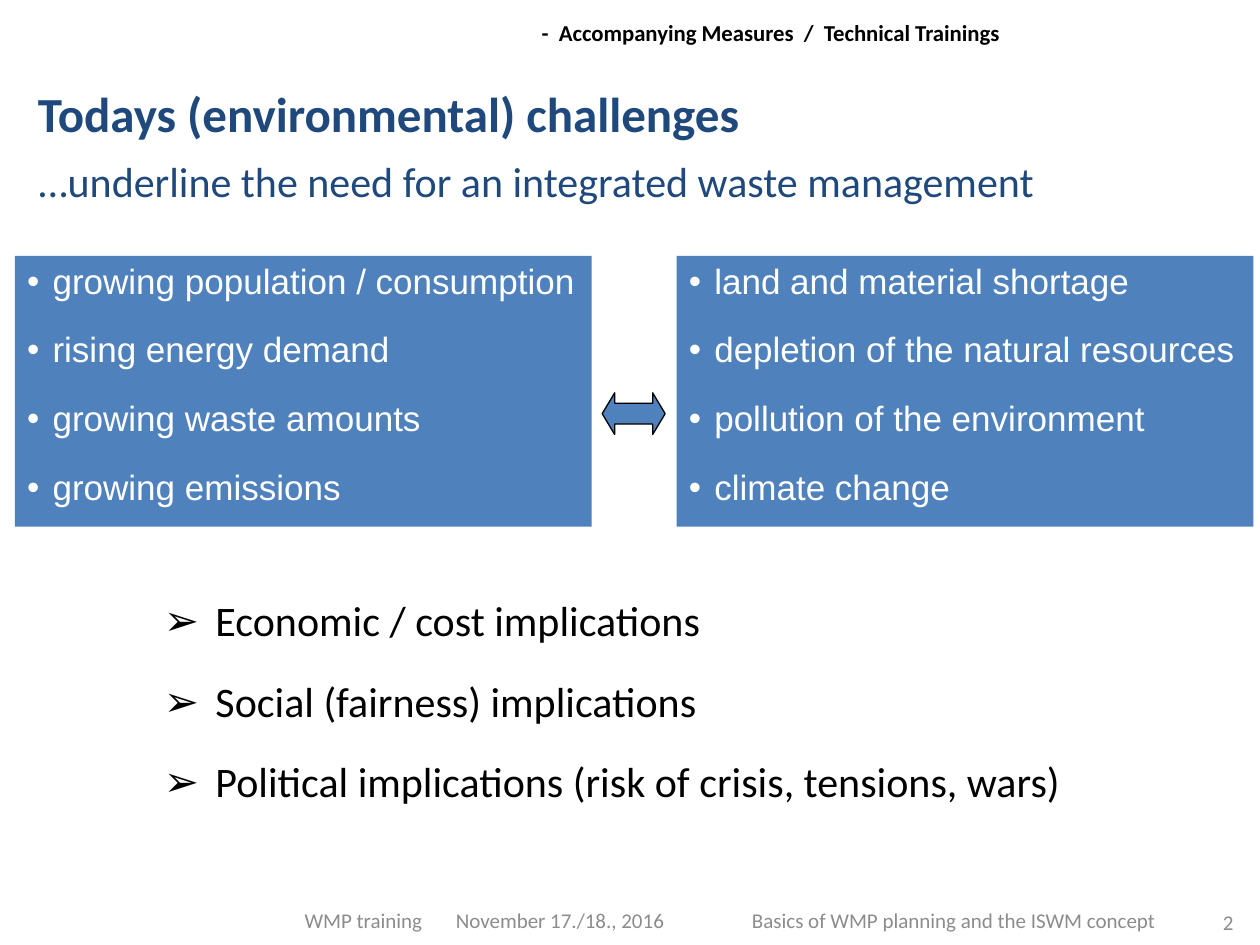
"""Builds the slide on environmental challenges and waste management."""
import pptx
import pptx.util
import pptx.dml.color
import pptx.enum.shapes
import pptx.enum.text
import pptx.oxml
import pptx.oxml.ns

Cm, Pt = pptx.util.Cm, pptx.util.Pt
RGB = pptx.dml.color.RGBColor
ALIGN = pptx.enum.text.PP_ALIGN
ANCHOR = pptx.enum.text.MSO_ANCHOR
SHAPE = pptx.enum.shapes.MSO_SHAPE

NAVY = RGB(0x1F, 0x49, 0x7D)
BLUE = RGB(0x4F, 0x81, 0xBD)
GREY = RGB(0x8C, 0x8C, 0x8C)
WHITE = RGB(0xFF, 0xFF, 0xFF)
BLACK = RGB(0, 0, 0)


class Deck:
    def __init__(self):
        self.file = pptx.Presentation()
        self.file.slide_width, self.file.slide_height = Cm(25.4), Cm(19.05)
        self.slide = self.file.slides.add_slide(self.file.slide_layouts[1])

    def place(self, shape, box):
        for name, size in zip(("left", "top", "width", "height"), box):
            setattr(shape, name, Cm(size))

    def node(self, para, xml):
        head, tail = xml.split(" ", 1)
        space = pptx.oxml.ns.nsdecls("a")
        item = pptx.oxml.parse_xml(f"<a:{head} {space} {tail}")
        para._p.get_or_add_pPr().append(item)

    def fill_text(self, shape, lines, size, color, face="Calibri", bold=False,
                  anchor=ANCHOR.TOP, align=ALIGN.LEFT, mark=None, dent=0, tab=None):
        frame = shape.text_frame
        form = {"word_wrap": True, "vertical_anchor": anchor,
                "auto_size": pptx.enum.text.MSO_AUTO_SIZE.NONE}
        for name, value in form.items():
            setattr(frame, name, value)
        for row, text in enumerate(lines):
            para = frame.paragraphs[0] if row == 0 else frame.add_paragraph()
            para.alignment = align
            if mark:
                props = para._p.get_or_add_pPr()
                props.set("marL", str(Cm(dent)))
                props.set("indent", str(-Cm(dent)))
                self.node(para, 'buFont typeface="Arial"/>')
                self.node(para, f'buChar char="{mark}"/>')
                para.line_spacing = 0.95
                para.space_before = Pt(size / 2 + 0.5 if row else 0)
                para.space_after = Pt(6)
            if tab:
                self.node(para, f'tabLst ><a:tab pos="{Cm(tab)}" algn="l"/></a:tabLst>')
            run = para.add_run()
            run.text = text
            font = {"size": Pt(size), "name": face, "bold": bold}
            for name, value in font.items():
                setattr(run.font, name, value)
            run.font.color.rgb = color

    def title(self, box, text, **style):
        self.place(self.slide.shapes.title, box)
        self.fill_text(self.slide.shapes.title, [text], **style)

    def body(self, box, lines, **style):
        shape = self.slide.placeholders[1]
        self.place(shape, box)
        self.fill_text(shape, lines, **style)

    def label(self, box, text, **style):
        shape = self.slide.shapes.add_textbox(*map(Cm, box))
        self.fill_text(shape, [text], **style)
        return shape

    def block(self, kind, box, fill):
        shape = self.slide.shapes.add_shape(kind, *map(Cm, box))
        shape.shadow.inherit = False
        shape.fill.solid()
        shape.fill.fore_color.rgb = fill
        shape.line.fill.background()
        return shape

    def panel(self, box, lines):
        self.fill_text(self.block(SHAPE.RECTANGLE, box, BLUE), lines, size=20,
                       color=WHITE, face="Arial", mark="•", dent=0.51)

    def arrow(self, box):
        shape = self.block(SHAPE.LEFT_RIGHT_ARROW, box, BLUE)
        shape.adjustments[0], shape.adjustments[1] = 0.5, 0.3
        shape.line.color.rgb = BLACK
        shape.line.width = Pt(0.75)


def main():
    deck = Deck()
    head = deck.label((10.72, 0.28, 10.11, 0.79),
                      "-  Accompanying Measures  /  Technical Trainings",
                      size=13, color=BLACK, bold=True)
    for side, gap in {"left": 0.2, "right": 0, "top": 0.1, "bottom": 0.1}.items():
        setattr(head.text_frame, f"margin_{side}", Cm(gap))
    foot = {"size": 12, "color": GREY, "anchor": ANCHOR.MIDDLE}
    deck.label((14.91, 18.03, 8.79, 1.02),
               "Basics of WMP planning and the ISWM concept", **foot)
    deck.label((5.89, 18.03, 7.8, 1.02),
               "WMP training\tNovember 17./18., 2016", tab=3.05, **foot)
    deck.label((22.91, 18.08, 2.21, 1.02), "2", align=ALIGN.RIGHT, **foot)
    deck.title((0.51, 1.55, 24.61, 1.35), "Todays (environmental) challenges",
               size=28, color=NAVY, bold=True)
    deck.label((0.53, 3.02, 23.16, 1.27),
               "…underline the need for an integrated waste management",
               size=24, color=NAVY)
    causes = ["growing population / consumption", "rising energy demand",
              "growing waste amounts", "growing emissions"]
    effects = ["land and material shortage", "depletion of the natural resources",
               "pollution of the environment", "climate change"]
    for left, lines in ((0.3, causes), (13.64, effects)):
        deck.panel((left, 5.16, 11.63, 5.46), lines)
    deck.arrow((12.14, 7.92, 1.27, 0.84))
    deck.body((3.05, 11.94, 20.52, 4.6),
              ["Economic / cost implications", "Social (fairness) implications",
               "Political implications (risk of crisis, tensions, wars)"],
              size=24, color=BLACK, mark="➢", dent=1.04)
    deck.file.save("out.pptx")


if __name__ == "__main__":
    main()
